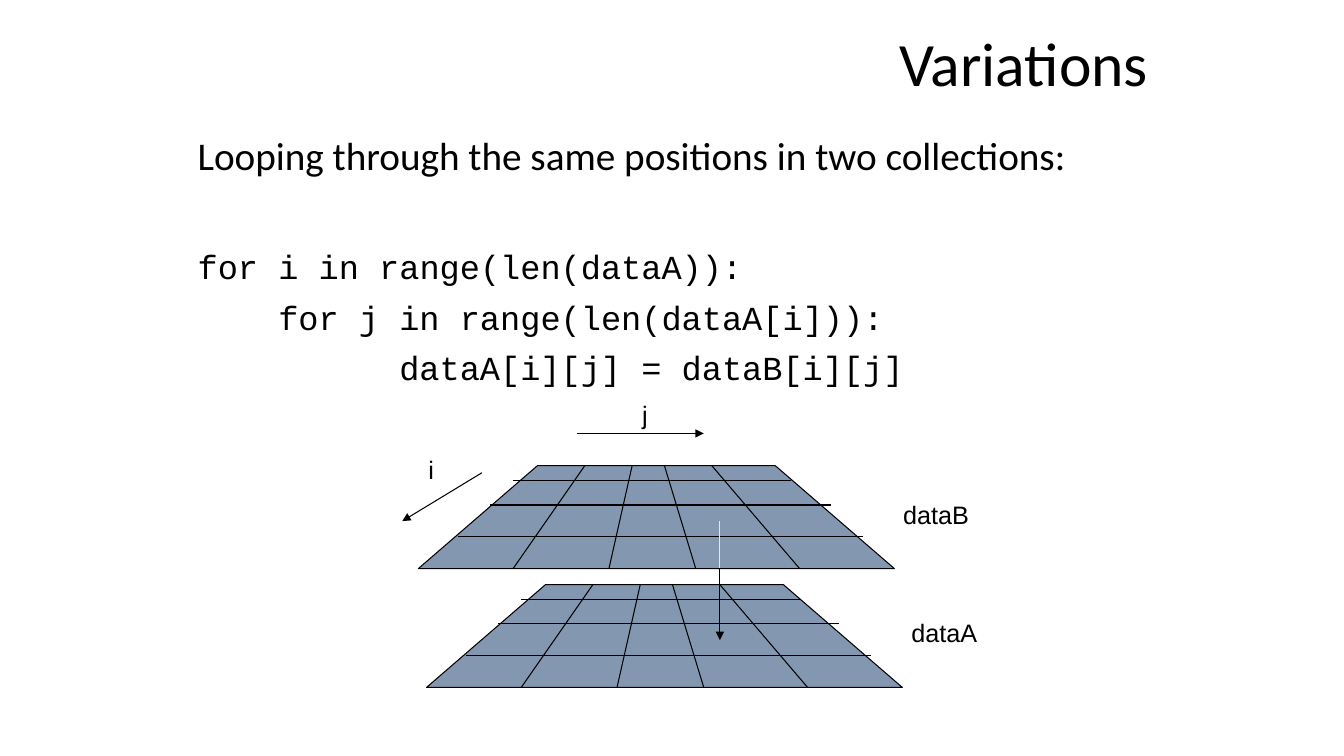
import pptx
import pptx.dml.color
import pptx.enum.shapes
import pptx.enum.text
import pptx.oxml.xmlchemy
import pptx.util

COLOURS = {"ink": "000000", "sheet": "8497B0", "pale": "E7E6E6"}
CODE_LINES = [
    ("for i in range(len(dataA)):", 0),
    ("for j in range(len(dataA[i])):", 0.8),
    ("dataA[i][j] = dataB[i][j]", 2),
]
SHEET_WIDTH, SHEET_HEIGHT, SHEET_INSET = 4.72, 1.02, 1.18
COLUMNS = [(0.94, 1.65), (1.89, 2.12), (2.75, 2.44), (3.78, 2.91)]  # bottom x, top x
ROWS = [(0.15, 0.94, 3.7), (0.39, 0.71, 4.09), (0.7, 0.39, 4.41)]  # y, left x, right x

Inches = pptx.util.Inches


def colour(name):
    return pptx.dml.color.RGBColor.from_string(COLOURS[name])


def add_element(parent, tag, **attributes):
    element = pptx.oxml.xmlchemy.OxmlElement(tag)
    for key, value in attributes.items():
        element.set(key, value)
    parent.append(element)


def place(shape, left, top, width, height):
    shape.left, shape.top = Inches(left), Inches(top)
    shape.width, shape.height = Inches(width), Inches(height)


def add_span(para, text, size, font):
    span = para.add_run()
    span.text = text
    span.font.size = pptx.util.Pt(size)
    span.font.name = font
    span.font.color.rgb = colour("ink")


def add_line(page, start, end, arrow=False, ink="ink"):
    points = [Inches(value) for value in (*start, *end)]
    line = page.shapes.add_connector(pptx.enum.shapes.MSO_CONNECTOR.STRAIGHT, *points)
    line.line.color.rgb = colour(ink)
    line.line.width = pptx.util.Pt(0.75)
    properties = line._element.spPr
    if arrow:
        add_element(properties.get_or_add_ln(), "a:tailEnd", type="triangle")
    add_element(properties, "a:effectLst")


def add_label(page, text, left, top, width):
    box = page.shapes.add_textbox(Inches(left), Inches(top), Inches(width), Inches(0.4))
    box.text_frame.word_wrap = False
    add_span(box.text_frame.paragraphs[0], text, 18, "Arial")


def fill_title(title, left, top, width, height):
    place(title, left, top, width, height)
    frame = title.text_frame
    frame.auto_size = pptx.enum.text.MSO_AUTO_SIZE.NONE
    frame.vertical_anchor = pptx.enum.text.MSO_ANCHOR.MIDDLE
    para = frame.paragraphs[0]
    para.alignment = pptx.enum.text.PP_ALIGN.RIGHT
    para.line_spacing = 0.9
    add_span(para, "Variations", 44, "Calibri")


def format_body_para(para, indent, space_before):
    para.line_spacing = 0.9
    para.space_before = pptx.util.Pt(space_before)
    properties = para._p.get_or_add_pPr()
    properties.set("marL", str(Inches(indent)))
    properties.set("indent", "0")
    add_element(properties, "a:buNone")


def fill_body(body, left, top, width, height):
    place(body, left, top, width, height)
    frame = body.text_frame
    frame.auto_size = pptx.enum.text.MSO_AUTO_SIZE.NONE
    intro = frame.paragraphs[0]
    format_body_para(intro, 0, 10)
    add_span(intro, "Looping through the same positions in two collections:", 28, "Calibri")
    for number, (text, indent) in enumerate(CODE_LINES):
        para = frame.add_paragraph()
        format_body_para(para, indent, 10 if number else 51)
        add_span(para, text, 24, "Courier New")


def draw_sheet(page, name, left, top):
    """Draw a grid seen in perspective, with its name at the right."""
    right, bottom = left + SHEET_WIDTH, top + SHEET_HEIGHT
    corners = [(left + SHEET_INSET, top), (right - SHEET_INSET, top), (right, bottom)]
    builder = page.shapes.build_freeform(Inches(left), Inches(bottom))
    builder.add_line_segments([(Inches(x), Inches(y)) for x, y in corners], close=True)
    sheet = builder.convert_to_shape()
    sheet.shadow.inherit = False
    sheet.fill.solid()
    sheet.fill.fore_color.rgb = colour("sheet")
    sheet.line.color.rgb = colour("ink")
    sheet.line.width = pptx.util.Pt(0.75)
    for near, far in COLUMNS:
        add_line(page, (left + near, bottom), (left + far, top))
    for drop, start, end in ROWS:
        add_line(page, (left + start, top + drop), (left + end, top + drop))
    add_label(page, name, right - 0.01, top + 0.28, 0.86)


def draw_diagram(page, left, top):
    """Draw both sheets, the index arrows and the copying arrow."""
    draw_sheet(page, "dataB", left + 0.16, top + 0.71)
    draw_sheet(page, "dataA", left + 0.24, top + 1.89)
    add_line(page, (left + 1.73, top + 0.39), (left + 2.99, top + 0.39), arrow=True)
    add_line(page, (left + 0.79, top + 0.78), (left, top + 1.26), arrow=True)
    add_label(page, "j", left + 2.28, top, 0.26)
    add_label(page, "i", left + 0.16, top + 0.55, 0.26)
    middle, edge = left + 3.15, top + 1.73
    add_line(page, (middle, edge), (middle, edge + 0.71), arrow=True)
    add_line(page, (middle, edge), (middle, edge - 0.47), ink="pale")


def main():
    deck = pptx.Presentation()
    deck.slide_width, deck.slide_height = Inches(13.33), Inches(7.5)
    page = deck.slides.add_slide(deck.slide_layouts[1])
    fill_title(page.shapes.title, 2.49, 0.28, 9, 0.77)
    fill_body(page.placeholders[1], 1.86, 1.31, 9.53, 5.98)
    draw_diagram(page, 3.99, 3.91)
    deck.save("out.pptx")


if __name__ == "__main__":
    main()
